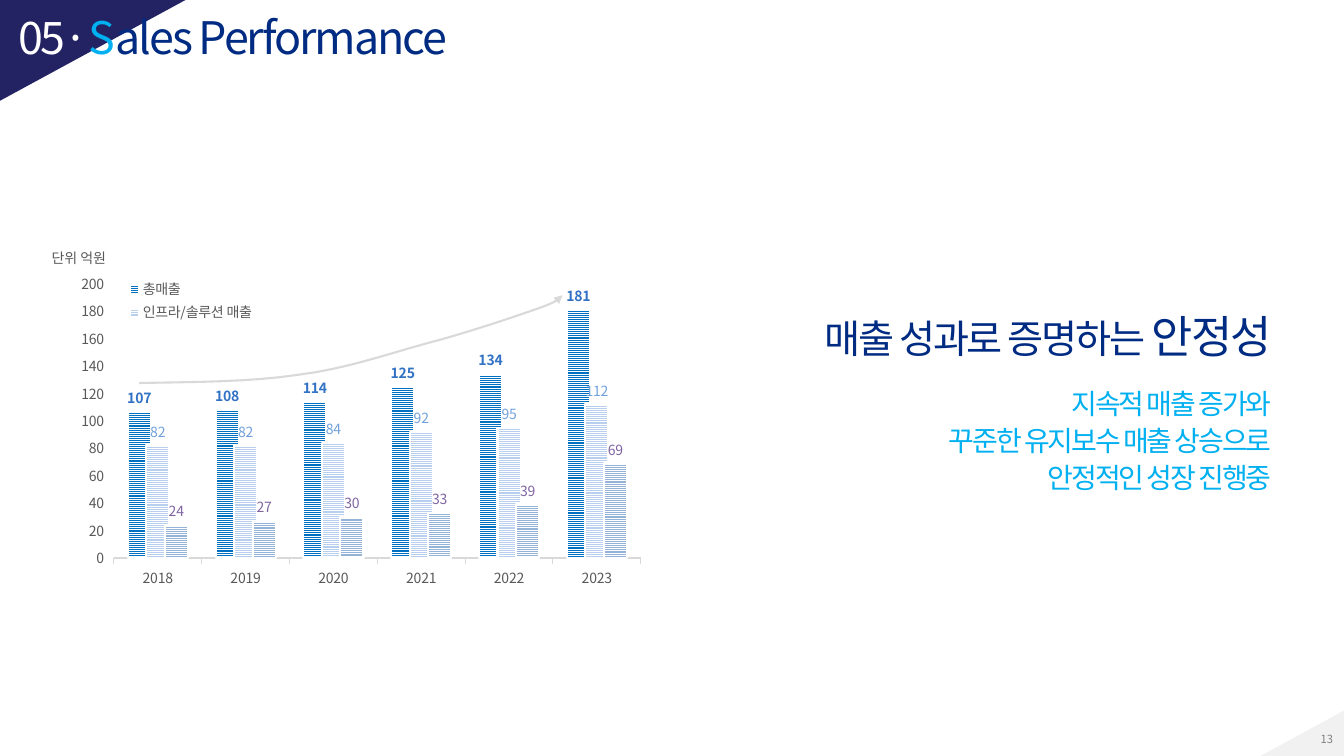
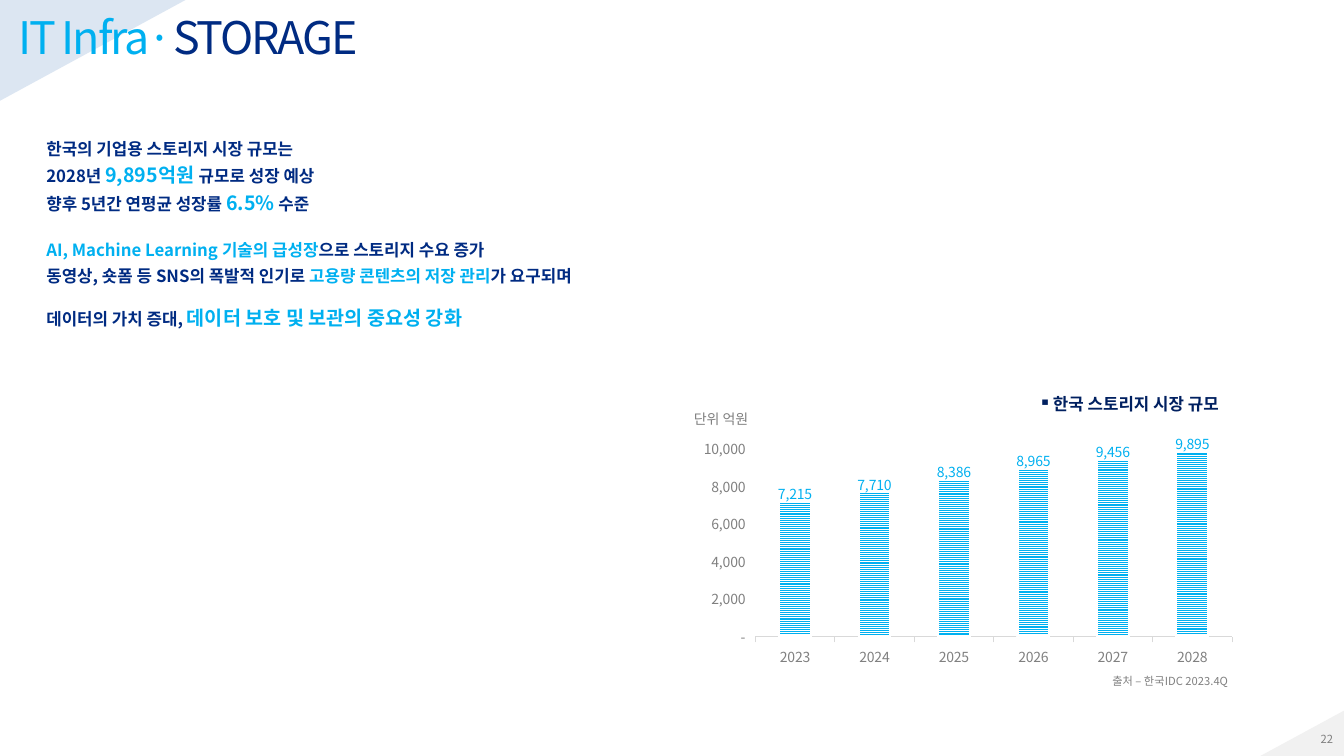
import copy
import pptx
import pptx.chart.data
import pptx.dml.color
import pptx.enum.chart
import pptx.enum.dml
import pptx.enum.shapes
import pptx.enum.text
import pptx.oxml
import pptx.oxml.ns
import pptx.util

Inches, Pt = pptx.util.Inches, pptx.util.Pt
RGB = pptx.dml.color.RGBColor
qn, nsdecls = pptx.oxml.ns.qn, pptx.oxml.ns.nsdecls
KIND = pptx.enum.chart.XL_CHART_TYPE
SPOT = pptx.enum.chart.XL_LABEL_POSITION
RIGHT = pptx.enum.text.PP_ALIGN.RIGHT
MIDDLE = pptx.enum.text.MSO_ANCHOR.MIDDLE

FONT = "Noto Sans CJK KR"
WHITE = RGB(0xFF, 0xFF, 0xFF)
NAVY = RGB(0x00, 0x2B, 0x82)
DEEP = RGB(0x00, 0x20, 0x60)
INK = RGB(0x23, 0x23, 0x63)
PALE = RGB(0xDC, 0xE6, 0xF2)
CYAN = RGB(0x00, 0xB0, 0xF0)
DARK = RGB(0x59, 0x59, 0x59)
GRAY = RGB(0x80, 0x80, 0x80)
RULE = RGB(0xD9, 0xD9, 0xD9)
MIST = RGB(0xF1, 0xF1, 0xF1)
WIDE, HIGH = 13.33, 7.5

# Content: a paragraph is a list of (text, colour, size)
UNIT = "단위 억원"
SALES = {
    "title": [("05·", WHITE, 32), ("S", CYAN, 32), ("ales Performance", NAVY, 32)],
    "lead": [[("매출 성과로 증명하는 ", NAVY, 28), ("안정성", NAVY, 32)]],
    "sub": [[(line, CYAN, 20)] for line in (
        "지속적 매출 증가와", "꾸준한 유지보수 매출 상승으로", "안정적인 성장 진행중")],
    "years": ["2018", "2019", "2020", "2021", "2022", "2023"],
    # name, values, bar colour, label colour, bold labels
    "rows": [
        ("총매출", (107, 108, 114, 125, 134, 181),
         RGB(0x00, 0x70, 0xC0), RGB(0x31, 0x72, 0xC4), True),
        ("인프라/솔루션 매출", (82, 82, 84, 92, 95, 112),
         RGB(0xB8, 0xD0, 0xED), RGB(0x71, 0xA1, 0xDC), False),
        ("유지보수 매출", (24, 27, 30, 33, 39, 69),
         RGB(0x95, 0xB3, 0xD7), RGB(0x80, 0x64, 0xA2), False),
    ],
}
# Trend curve: start, then cubic pieces (two handles and an end)
START = (1.38, 3.8)
CURVE = [
    ((1.93, 3.79), (2.48, 3.79), (2.95, 3.72)),
    ((3.43, 3.66), (3.82, 3.52), (4.22, 3.41)),
    ((4.61, 3.31), (5.08, 3.15), (5.31, 3.07)),
    ((5.54, 2.99), (5.56, 2.96), (5.58, 2.93)),
]
STORE = {
    "title": [("IT Infra·", CYAN, 32), ("STORAGE", NAVY, 32)],
    # space before, line pitch, runs
    "body": [
        (0, 19, [("한국의 기업용 스토리지 시장 규모는", NAVY, 12)]),
        (1, 19, [("2028년 ", NAVY, 12), ("9,895억원 ", CYAN, 14),
                 ("규모로 성장 예상", NAVY, 12)]),
        (1, 19, [("향후 5년간 연평균 성장률 ", NAVY, 12), ("6.5%", CYAN, 14),
                 (" 수준", NAVY, 12)]),
        (14, 18, [("AI, Machine Learning 기술의 급성장", CYAN, 12),
                  ("으로 스토리지 수요 증가", NAVY, 12)]),
        (1, 18, [("동영상, 숏폼 등 SNS의 폭발적 인기로 ", NAVY, 12),
                 ("고용량 콘텐츠의 저장 관리", CYAN, 12), ("가 요구되며", NAVY, 12)]),
        (12, 19, [("데이터의 가치 증대, ", NAVY, 12),
                  ("데이터 보호 및 보관의 중요성 강화", CYAN, 14)]),
    ],
    "head": "한국 스토리지 시장 규모",
    "note": "출처 – 한국IDC 2023.4Q",
    "years": ["2023", "2024", "2025", "2026", "2027", "2028"],
    "rows": [("Series 1", (7215, 7710, 8386, 8965, 9456, 9895), CYAN, CYAN, False)],
}


def style(font, size, color, bold=False):
    font.size, font.bold = Pt(size), bold
    font.color.rgb = color
    font.name = FONT
    latin = font._element.find(qn("a:latin"))
    latin.addnext(pptx.oxml.parse_xml(f'<a:ea {nsdecls("a")} typeface="{FONT}"/>'))


def write(slide, box, paras, align=None, pitch=None, anchor=None,
          inset=(0.1, 0.05), bold=False, tight=False):
    frame = slide.shapes.add_textbox(*map(Inches, box)).text_frame
    frame.word_wrap = True
    frame.margin_left, frame.margin_top = map(Inches, inset)
    frame.margin_right, frame.margin_bottom = Inches(min(inset[0], 0.1)), Inches(inset[1])
    if anchor is not None:
        frame.vertical_anchor = anchor
    for i, runs in enumerate(paras):
        para = frame.add_paragraph() if i else frame.paragraphs[0]
        para.alignment, para.line_spacing = align, pitch
        for words, color, size in runs:
            run = para.add_run()
            run.text = words
            style(run.font, size, color, bold)
            if tight:
                run.font._element.set("spc", "-150")
    return frame


def paint(shape, color):
    shape.shadow.inherit = False
    shape.fill.solid()
    shape.fill.fore_color.rgb = color
    shape.line.fill.background()


def trace(slide, points, close):
    first, *rest = [tuple(map(Inches, p)) for p in points]
    path = slide.shapes.build_freeform(*first)
    path.add_line_segments(rest, close=close)
    return path.convert_to_shape()


def begin(deck, title, color, page):
    """Blank slide with the shared corners, title and page number."""
    slide = deck.slides.add_slide(deck.slide_layouts[6])
    paint(trace(slide, [(WIDE, 7.05), (12.5, HIGH), (WIDE, HIGH)], True), MIST)
    wedge = slide.shapes.add_shape(
        pptx.enum.shapes.MSO_SHAPE.ISOSCELES_TRIANGLE,
        *map(Inches, (0.42, -0.42, 1, 1.84)))
    wedge.adjustments[0] = 0
    wedge.rotation = 90
    paint(wedge, color)
    write(slide, (0, 0.04, WIDE, 0.64), [title], anchor=MIDDLE,
          inset=(0.18, 0.05), tight=True)
    write(slide, (10.32, 7.2, 3, 0.27), [[(page, GRAY, 8)]], RIGHT, anchor=MIDDLE)
    return slide


def layout(x, y, size=None, inner=False):
    """Manual chart layout, as shares of the chart area."""
    parts = []
    if inner:
        parts.append(("layoutTarget", "inner"))
    if size:
        parts += [("xMode", "edge"), ("yMode", "edge")]
    parts += [("x", x), ("y", y)]
    if size:
        parts += [("w", size[0]), ("h", size[1])]
    body = "".join(f'<c:{tag} val="{val}"/>' for tag, val in parts)
    return pptx.oxml.parse_xml(
        f'<c:layout {nsdecls("c")}><c:manualLayout>{body}</c:manualLayout></c:layout>')


def bars(slide, box, kind, data, color, top, step, form, gap, lap, spot):
    table = pptx.chart.data.CategoryChartData()
    table.categories = data["years"]
    for name, vals, *_ in data["rows"]:
        table.add_series(name, vals)
    chart = slide.shapes.add_chart(kind, *map(Inches, box), table).chart
    style(chart.font, 10, color)
    chart.has_title = chart.has_legend = False
    area = chart._chartSpace.chart.plotArea
    for old in area.findall(qn("c:layout")):
        area.remove(old)
    area.insert(0, layout(0.102, 0.083, (0.874, 0.799), True))

    # Axes
    cat, val = chart.category_axis, chart.value_axis
    val.has_major_gridlines = False
    val.minimum_scale, val.maximum_scale, val.major_unit = 0, top, step
    val.tick_labels.number_format = form
    val.tick_labels.number_format_is_linked = False
    val.format.line.fill.background()
    cat.format.line.color.rgb = RULE
    cat.format.line.width = Pt(0.75)
    for axis in (cat, val):
        style(axis.tick_labels.font, 10, color)

    # Bars and their labels
    plot = chart.plots[0]
    plot.gap_width, plot.overlap, plot.vary_by_categories = gap, lap, False
    for row, (_, _, tint, ink, bold) in zip(plot.series, data["rows"]):
        fill = row.format.fill
        fill.patterned()
        fill.pattern = pptx.enum.dml.MSO_PATTERN.NARROW_HORIZONTAL
        fill.fore_color.rgb, fill.back_color.rgb = tint, WHITE
        row.format.line.color.rgb = WHITE
        row.format.line.width = Pt(1.5)
        row.invert_if_negative = False
        labels = row.data_labels
        labels.show_value = True
        labels.number_format = "#,##0"
        labels.number_format_is_linked = False
        labels.position = spot
        style(labels.font, 10, ink, bold)
    return chart


def lift(row, count, rise):
    """Move each label of a series up by a share of the chart height."""
    root = row.data_labels._element
    shared = [part for part in root if part.tag != qn("c:showLeaderLines")]
    for i in range(count):
        label = pptx.oxml.parse_xml(
            f'<c:dLbl {nsdecls("c")}><c:idx val="{i}"/></c:dLbl>')
        label.append(layout(0, -rise))
        for part in shared:
            label.append(copy.deepcopy(part))
        root.insert(i, label)


def bend(start, pieces, steps=8):
    points = [start]
    for b, c, d in pieces:
        a = points[-1]
        for t in (k / steps for k in range(1, steps + 1)):
            u = 1 - t
            points.append(tuple(
                u**3 * p + 3 * u * u * t * q + 3 * u * t * t * r + t**3 * s
                for p, q, r, s in zip(a, b, c, d)))
    return points


def sales(deck):
    slide = begin(deck, SALES["title"], INK, "13")
    chart = bars(slide, (0.52, 2.53, 5.98, 3.41), KIND.COLUMN_CLUSTERED, SALES,
                 DARK, 200, 20, "#,##0", 120, 20, SPOT.OUTSIDE_END)
    # Legend shows the first two series only
    chart.has_legend = True
    key = chart.legend
    key.include_in_layout = False
    style(key.font, 10, DARK)
    root = key._element
    for tag in ("c:legendPos", "c:layout"):
        for old in root.findall(qn(tag)):
            root.remove(old)
    root.insert(0, layout(0.1, 0.06, (0.26, 0.145)))
    root.insert(0, pptx.oxml.parse_xml(
        f'<c:legendEntry {nsdecls("c")}><c:idx val="2"/><c:delete val="1"/></c:legendEntry>'))

    write(slide, (0.24, 2.38, 0.91, 0.3), [[(UNIT, DARK, 10)]], RIGHT, 1.3)
    write(slide, (6.73, 3.07, 5.98, 0.43), SALES["lead"], RIGHT, 0.9, tight=True)
    write(slide, (6.73, 3.75, 5.98, 0.43), SALES["sub"], RIGHT, 1.1, tight=True)

    # Trend arrow
    trend = trace(slide, bend(START, CURVE), False)
    trend.shadow.inherit = False
    trend.fill.background()
    trend.line.color.rgb = RULE
    trend.line.width = Pt(1.5)
    trend.line._get_or_add_ln().append(
        pptx.oxml.parse_xml(f'<a:tailEnd {nsdecls("a")} type="triangle"/>'))


def store(deck):
    slide = begin(deck, STORE["title"], PALE, "22")
    body = write(slide, (0.46, 1.29, 7.8, 1.99), [runs for _, _, runs in STORE["body"]],
                 inset=(0, 0.02), bold=True)
    for para, (before, pitch, _) in zip(body.paragraphs, STORE["body"]):
        para.line_spacing = Pt(pitch)
        if before:
            para.space_before = Pt(before)
    write(slide, (6.74, 6.58, 5.54, 0.28), [[(STORE["note"], GRAY, 8)]],
          RIGHT, 1.5, MIDDLE)
    write(slide, (6.61, 3.97, 0.91, 0.3), [[(UNIT, GRAY, 10)]], RIGHT, 1.3)
    chart = bars(slide, (6.94, 4.26, 5.41, 2.35), KIND.COLUMN_STACKED, STORE, GRAY,
                 10000, 2000, '#,##0;-#,##0;"-"', 150, 100, SPOT.INSIDE_END)
    lift(chart.plots[0].series[0], len(STORE["years"]), 0.09)

    # Chart heading with a square bullet
    head = write(slide, (8.49, 3.89, 3.6, 0.22), [[(STORE["head"], DEEP, 12)]],
                 RIGHT, inset=(0, 0.02), bold=True)
    props = head.paragraphs[0]._p.get_or_add_pPr()
    props.set("marL", str(Inches(0.14)))
    props.set("indent", str(-Inches(0.14)))
    props.append(pptx.oxml.parse_xml(f'<a:buChar {nsdecls("a")} char="▪"/>'))


def main():
    deck = pptx.Presentation()
    deck.slide_width, deck.slide_height = Inches(WIDE), Inches(HIGH)
    sales(deck)
    store(deck)
    deck.save("out.pptx")


if __name__ == "__main__":
    main()
